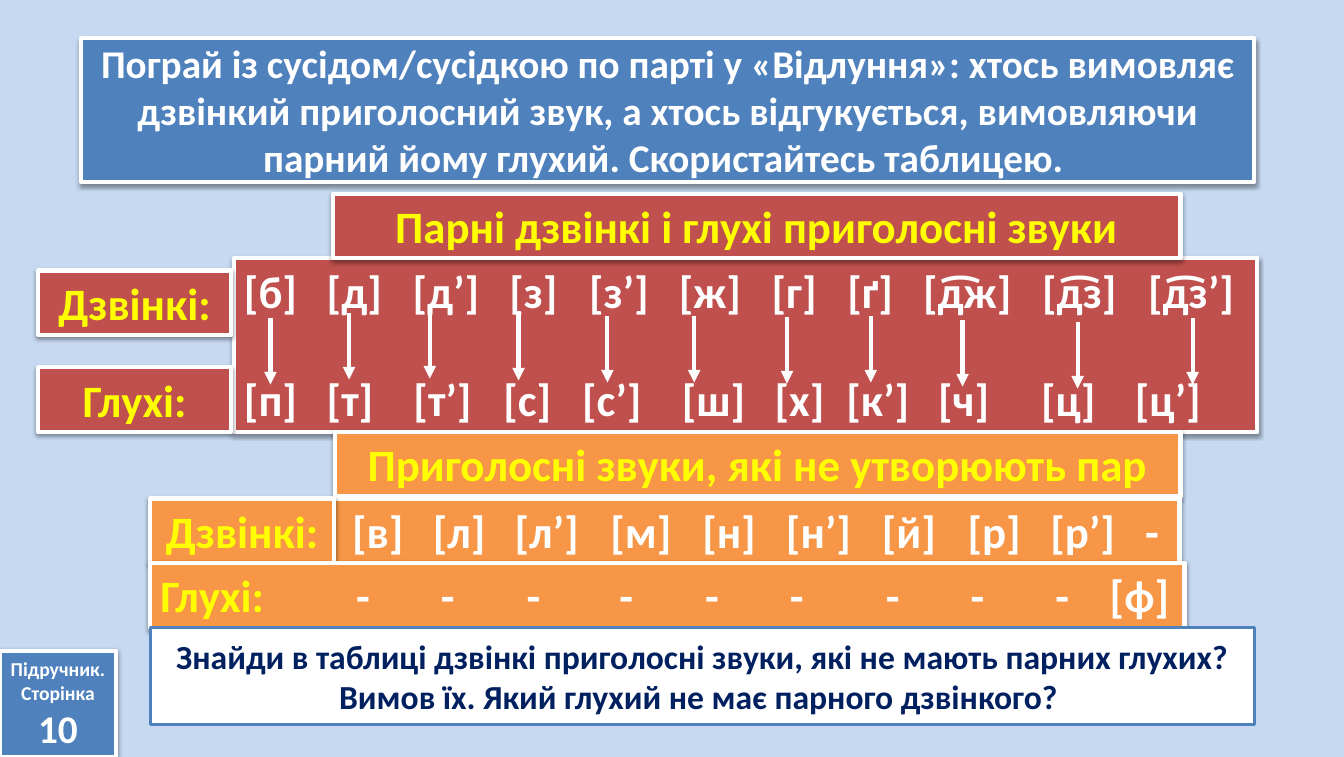
from lxml.etree import SubElement as Sub
from pptx import Presentation
from pptx.dml.color import RGBColor as Rgb
from pptx.enum.shapes import MSO_CONNECTOR as Conn, MSO_SHAPE as Form
from pptx.enum.text import MSO_ANCHOR as Anchor, MSO_AUTO_SIZE as Auto, PP_ALIGN as Align
from pptx.oxml.ns import qn
from pptx.util import Emu, Pt

HUES = {
    "sky": "C6D9F1", "blue": "4F81BD", "red": "C0504D", "orange": "F79646",
    "white": "FFFFFF", "yellow": "FFFF00", "navy": "002060", "black": "000000",
}
VOICED = ["[б]", "[д]", "[д’]", "[з]", "[з’]", "[ж]", "[г]", "[ґ]", "[д͡ж]", "[д͡з]", "[д͡з’]"]
MUTE = ["[п]", "[т]", "[т’]", "[с]", "[с’]", "[ш]", "[х]", "[к’]", "[ч]", "[ц]", "[ц’]"]
SOLO = ["[в]", "[л]", "[л’]", "[м]", "[н]", "[н’]", "[й]", "[р]", "[р’]", "-"]
VOICED_TABS = [82, 167, 263, 342, 431, 523, 598, 673, 791, 896]
MUTE_TABS = [82, 168, 257, 335, 434, 526, 597, 688, 790, 883]
SOLO_TABS = [80, 161, 256, 347, 430, 525, 610, 692, 786]
DASH_TABS = [194, 278, 363, 455, 540, 624, 719, 803, 887, 941]
ARROWS = [(36, 59), (114, 54), (194, 53), (282, 55), (370, 57), (456, 57),
          (548, 58), (631, 57), (722, 61), (836, 63), (950, 59)]


def px(n):
    return Emu(n * 9144)


def hue(name):
    return Rgb.from_string(HUES[name])


def shade(shape):
    shape.shadow.inherit = False
    glow = Sub(shape._element.spPr.find(qn("a:effectLst")), qn("a:outerShdw"),
               blurRad=str(Pt(3.1)), dist=str(Pt(1.6)), dir="5400000", rotWithShape="0")
    tint = Sub(glow, qn("a:srgbClr"), val=HUES["black"])
    Sub(tint, qn("a:alpha"), val="38000")


def style(shape, box, fill, edge="white", width=3, anchor=Anchor.TOP):
    shape.left, shape.top, shape.width, shape.height = map(px, box)
    shape.fill.solid()
    shape.fill.fore_color.rgb = hue(fill)
    shape.line.color.rgb = hue(edge)
    shape.line.width = Pt(width)
    frame = shape.text_frame
    frame.word_wrap = True
    frame.auto_size = Auto.NONE
    frame.vertical_anchor = anchor
    return frame


def panel(slide, box, fill, **look):
    shape = slide.shapes.add_shape(Form.RECTANGLE, *map(px, box))
    frame = style(shape, box, fill, **look)
    shade(shape)
    return frame


def write(para, runs, align=Align.CENTER, tabs=()):
    para.alignment = align
    if tabs:
        stops = Sub(para._p.get_or_add_pPr(), qn("a:tabLst"))
        for stop in tabs:
            Sub(stops, qn("a:tab"), pos=str(px(stop)), algn="l")
    for text, size, color in runs:
        run = para.add_run()
        run.text = text
        font = run.font
        font.name, font.size, font.bold = "Calibri", Pt(size), True
        font.color.rgb = hue(color)


def label(slide, box, fill, text):
    write(panel(slide, box, fill).paragraphs[0], [(text, 32, "yellow")])


def task(slide, box):
    title = slide.shapes.title
    frame = style(title, box, "blue", anchor=Anchor.MIDDLE)
    shade(title)
    text = ("Пограй із сусідом/сусідкою по парті у «Відлуння»: хтось вимовляє "
            "дзвінкий приголосний звук, а хтось відгукується, вимовляючи "
            "парний йому глухий. Скористайтесь таблицею. ")
    write(frame.paragraphs[0], [(text, 28, "white")])


def arrow(slide, x, y):
    line = slide.shapes.add_connector(Conn.STRAIGHT, px(x), px(y), px(x), px(y + 66))
    line.line.color.rgb = hue("white")
    line.line.width = Pt(3)
    Sub(line.line._get_or_add_ln(), qn("a:tailEnd"), type="triangle")
    Sub(line._element.spPr, qn("a:effectLst"))


def pairs(slide, box):
    x, y, w, h = box
    frame = panel(slide, (x + 194, y + 64, w - 194, h - 64), "red")
    write(frame.paragraphs[0], [("\t".join(VOICED), 32, "white")], Align.LEFT, VOICED_TABS)
    low = frame.add_paragraph()
    write(low, [("\t".join(MUTE), 32, "white")], Align.LEFT, MUTE_TABS)
    low.space_before = Pt(39)
    for dx, dy in ARROWS:
        arrow(slide, x + 194 + dx, y + 64 + dy)
    label(slide, (x + 292, y, 840, 64), "red", "Парні дзвінкі і глухі приголосні звуки")
    label(slide, (x, y + 76, 191, 64), "red", "Дзвінкі:")
    label(slide, (x, y + 172, 191, 64), "red", "Глухі:")


def solos(slide, box):
    x, y, w, h = box
    label(slide, (x + 183, y, 838, 64), "orange", "Приголосні звуки, які не утворюють пар")
    frame = panel(slide, (x + 182, y + 66, 838, 64), "orange")
    frame.margin_left = px(18)
    write(frame.paragraphs[0], [("\t".join(SOLO), 32, "white")], Align.LEFT, SOLO_TABS)
    label(slide, (x, y + 66, 182, 64), "orange", "Дзвінкі:")
    frame = panel(slide, (x, y + h - 64, w, 64), "orange")
    marks = "\t" + "\t".join(["-"] * 9 + ["[ф]"])
    write(frame.paragraphs[0], [("Глухі:", 32, "yellow"), (marks, 32, "white")],
          Align.LEFT, DASH_TABS)


def badge(slide, box):
    frame = panel(slide, box, "blue", anchor=Anchor.MIDDLE)
    lines = [("Підручник.", 14), ("Сторінка", 14), ("10", 28)]
    for i, (text, size) in enumerate(lines):
        para = frame.add_paragraph() if i else frame.paragraphs[0]
        write(para, [(text, size, "white")])


def query(slide, box):
    shape = slide.shapes.add_shape(Form.RECTANGLE, *map(px, box))
    shape.shadow.inherit = False
    frame = style(shape, box, "white", edge="blue", width=2, anchor=Anchor.MIDDLE)
    text = ("Знайди в таблиці дзвінкі приголосні звуки, які не мають парних глухих? "
            "Вимов їх. Який глухий не має парного дзвінкого? ")
    write(frame.paragraphs[0], [(text, 24, "navy")])


def main():
    deck = Presentation()
    deck.slide_width, deck.slide_height = px(1332), px(750)
    slide = deck.slides.add_slide(deck.slide_layouts[5])
    slide.background.fill.solid()
    slide.background.fill.fore_color.rgb = hue("sky")
    task(slide, (80, 38, 1163, 142))
    pairs(slide, (38, 192, 1208, 236))
    solos(slide, (149, 428, 1025, 194))
    badge(slide, (0, 645, 115, 105))
    query(slide, (149, 622, 1094, 96))
    deck.save("out.pptx")


if __name__ == "__main__":
    main()
